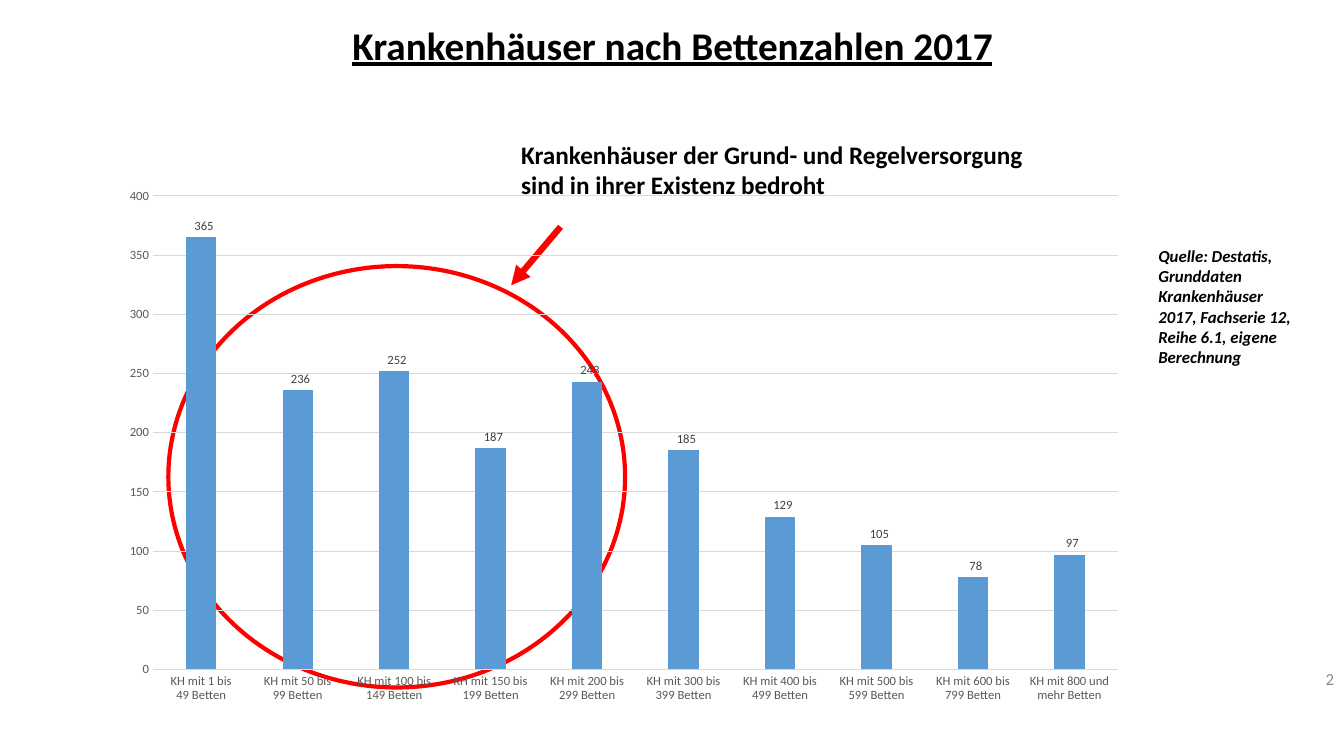
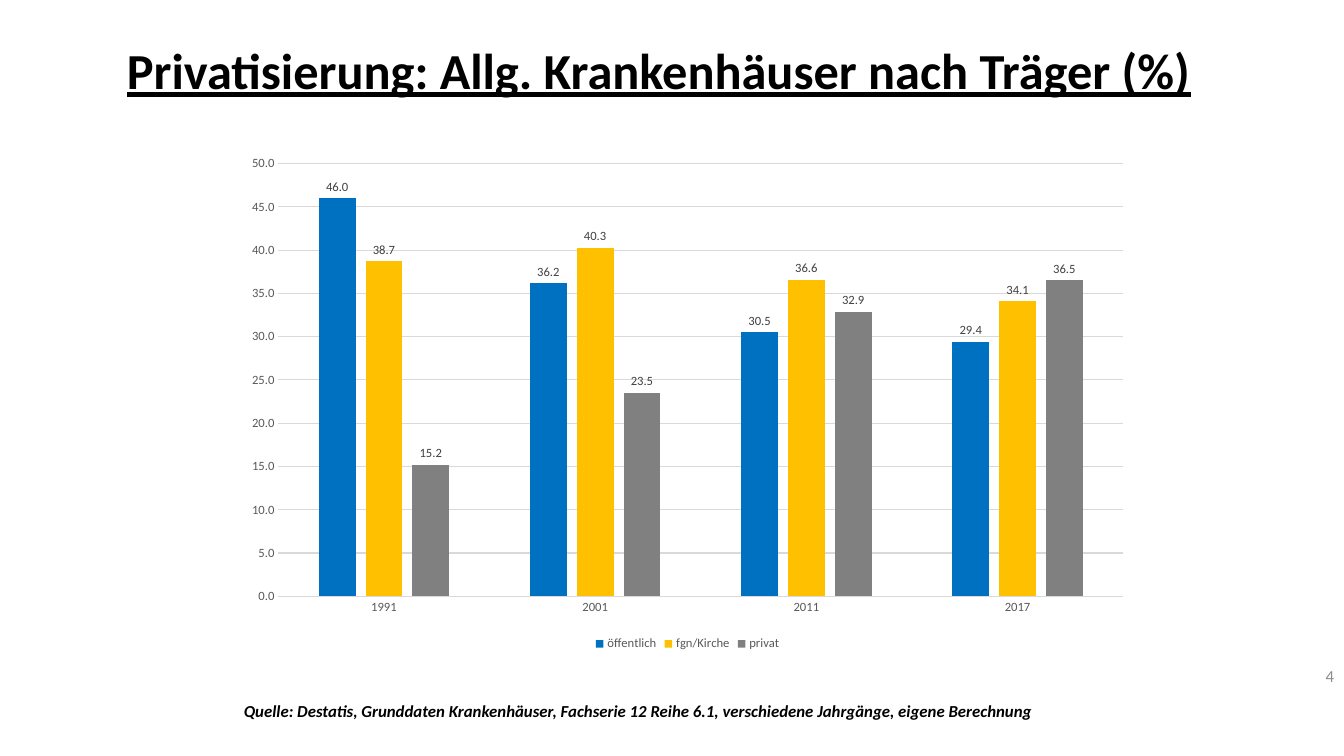
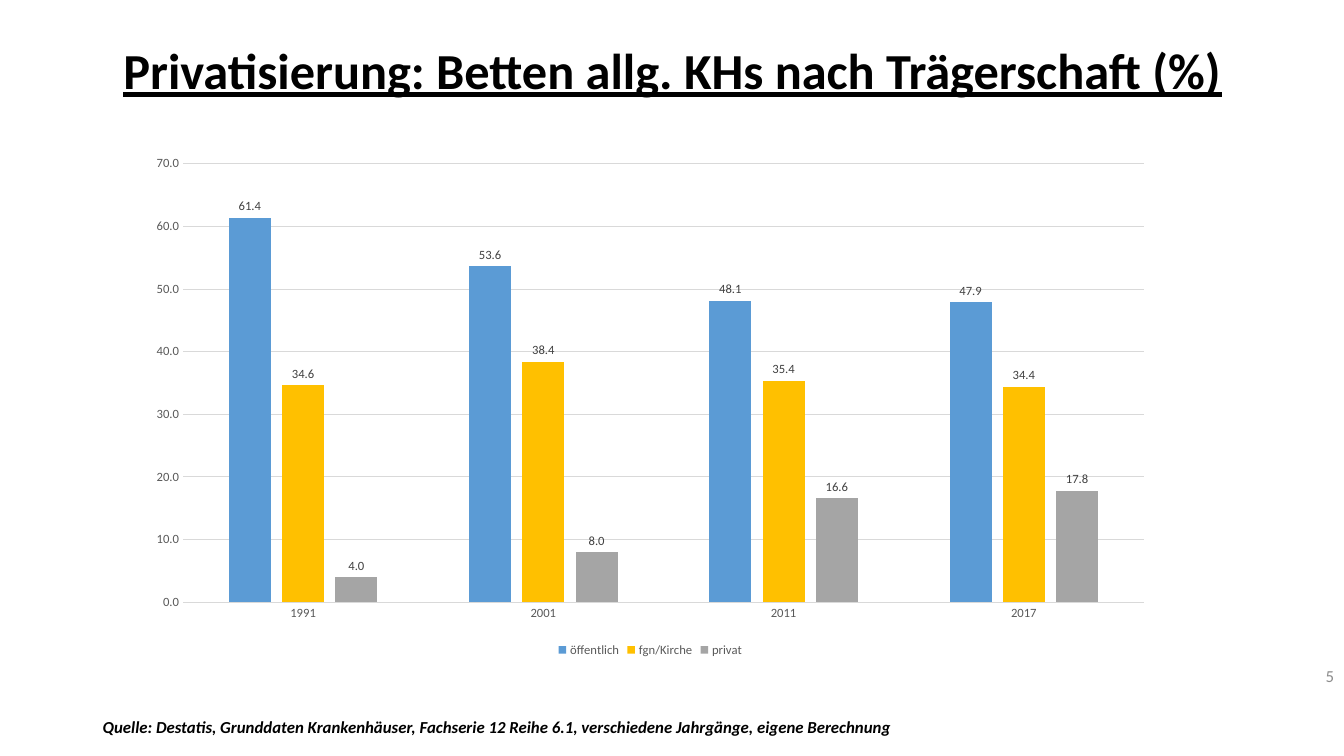
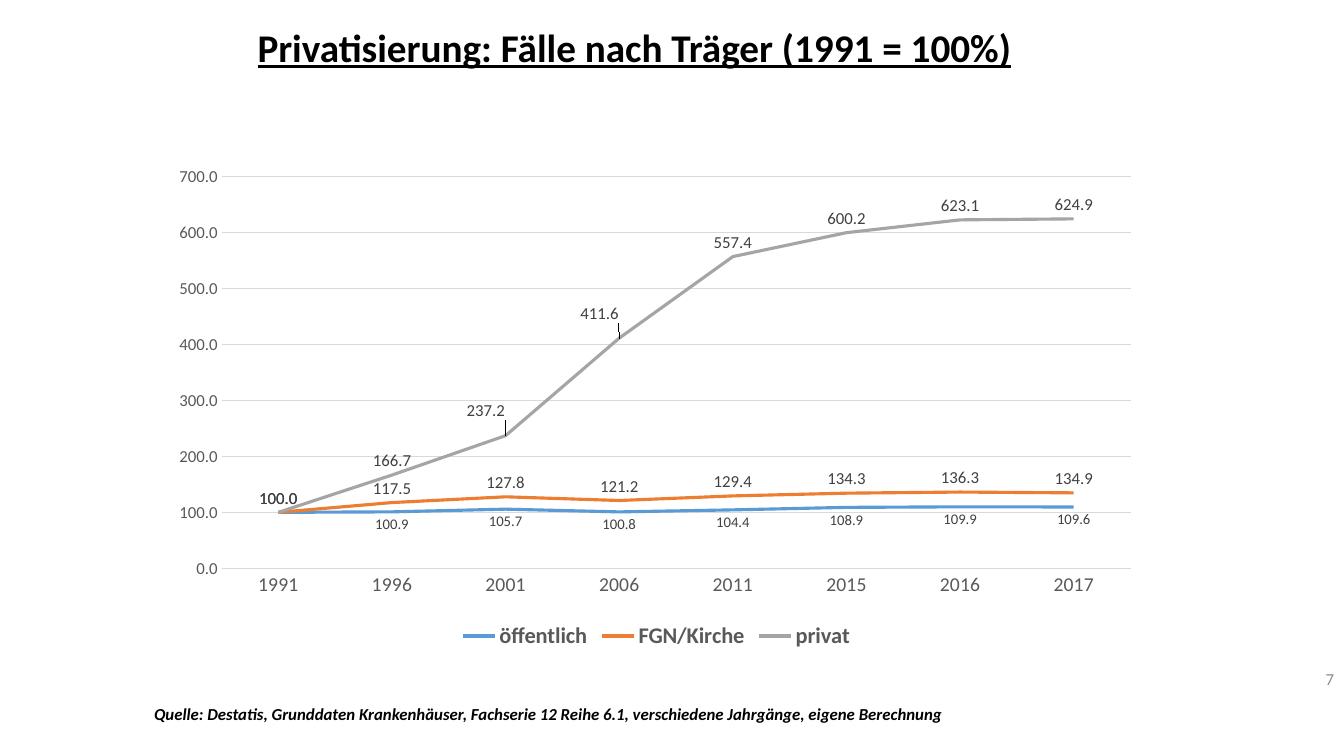
"""Build four slides on German hospitals by size and ownership."""
import pptx
import pptx.chart.data
import pptx.dml.color
import pptx.enum.chart
import pptx.enum.shapes
import pptx.enum.text
import pptx.oxml
import pptx.oxml.ns
import pptx.util

Inches = pptx.util.Inches
Pt = pptx.util.Pt
RGBColor = pptx.dml.color.RGBColor
ChartType = pptx.enum.chart.XL_CHART_TYPE
LabelPosition = pptx.enum.chart.XL_LABEL_POSITION
TickMark = pptx.enum.chart.XL_TICK_MARK
Anchor = pptx.enum.text.MSO_ANCHOR
Align = pptx.enum.text.PP_ALIGN

FONT = "Calibri"
BLACK = RGBColor(0x00, 0x00, 0x00)
RED = RGBColor(0xFF, 0x00, 0x00)
NUMBER_GRAY = RGBColor(0x8C, 0x8C, 0x8C)
AXIS_GRAY = RGBColor(0x59, 0x59, 0x59)
LABEL_GRAY = RGBColor(0x40, 0x40, 0x40)
GRID_GRAY = RGBColor(0xD9, 0xD9, 0xD9)
LIGHT_BLUE = RGBColor(0x5B, 0x9B, 0xD5)
DEEP_BLUE = RGBColor(0x00, 0x70, 0xC0)
YELLOW = RGBColor(0xFF, 0xC0, 0x00)
ORANGE = RGBColor(0xED, 0x7D, 0x31)
LIGHT_GRAY = RGBColor(0xA5, 0xA5, 0xA5)
DARK_GRAY = RGBColor(0x80, 0x80, 0x80)

COUNT_FORMAT = r"###\ ###\ ##0"
DECIMAL_FORMAT = "0.0"
SOURCE = ("Quelle: Destatis, Grunddaten Krankenhäuser, Fachserie 12 Reihe 6.1, "
          "verschiedene Jahrgänge, eigene Berechnung")
OWNER_YEARS = ["1991", "2001", "2011", "2017"]


def set_font(font, size, color, bold=False, italic=False, underline=False):
    """Apply the deck font with the given size, colour and style."""
    font.name = FONT
    font.size = Pt(size)
    font.color.rgb = color
    font.bold = bold
    font.italic = italic
    font.underline = underline


def place(shape, area):
    """Move and size a shape to left, top, width and height in inches."""
    shape.left, shape.top, shape.width, shape.height = map(Inches, area)


def add_page(deck, title, area, size, number, number_top, anchor=Anchor.MIDDLE):
    """Add a title-only slide with its formatted title and page number."""
    page = deck.slides.add_slide(deck.slide_layouts[5])
    place(page.shapes.title, area)
    frame = page.shapes.title.text_frame
    frame.text = title
    frame.auto_size = pptx.enum.text.MSO_AUTO_SIZE.NONE
    frame.vertical_anchor = anchor
    para = frame.paragraphs[0]
    para.alignment = Align.CENTER
    para.line_spacing = 0.9
    set_font(para.font, size, BLACK, bold=True, underline=True)
    box = add_text(page, number, (10.33, number_top, 3, 0.4), 12, NUMBER_GRAY, align=Align.RIGHT)
    box.text_frame.vertical_anchor = Anchor.MIDDLE
    return page


def add_text(page, text, area, size, color=BLACK, align=Align.LEFT, **style):
    """Add a wrapping text box, one paragraph for each line of text."""
    box = page.shapes.add_textbox(*map(Inches, area))
    box.text_frame.word_wrap = True
    box.text_frame.text = text
    for para in box.text_frame.paragraphs:
        para.alignment = align
        set_font(para.font, size, color, **style)
    return box


def add_source(page, area, text=SOURCE):
    """Add the bold italic source note."""
    add_text(page, text, area, 12, bold=True, italic=True)


def add_highlight(page):
    """Add the red ellipse and the arrow that points to it."""
    shapes = page.shapes.add_group_shape().shapes
    ellipse = shapes.add_shape(pptx.enum.shapes.MSO_SHAPE.OVAL,
                               *map(Inches, (1.67, 2.64, 4.53, 4.18)))
    ellipse.shadow.inherit = False
    ellipse.fill.background()
    arrow = shapes.add_connector(pptx.enum.shapes.MSO_CONNECTOR.STRAIGHT,
                                 *map(Inches, (5.56, 2.25, 5.07, 2.83)))
    for shape, width in ((ellipse, 3), (arrow, 4.5)):
        shape.line.color.rgb = RED
        shape.line.width = Pt(width)
    namespace = pptx.oxml.ns.nsdecls("a")
    arrow.line._get_or_add_ln().append(
        pptx.oxml.parse_xml(f'<a:tailEnd {namespace} type="triangle"/>'))
    arrow._element.spPr.append(pptx.oxml.parse_xml(f"<a:effectLst {namespace}/>"))


def manual_layout(**values):
    """Return a chart layout element with the given children in order."""
    children = "".join(f'<c:{name} val="{value}"/>' for name, value in values.items())
    return pptx.oxml.parse_xml(f'<c:layout {pptx.oxml.ns.nsdecls("c")}>'
                               f"<c:manualLayout>{children}</c:manualLayout></c:layout>")


def set_plot_area(chart, x, y, w, h):
    """Fix the inner plot area as fractions of the chart."""
    plot_area = chart._chartSpace.chart.plotArea
    for layout in plot_area.findall(pptx.oxml.ns.qn("c:layout")):
        plot_area.remove(layout)
    plot_area.insert(0, manual_layout(layoutTarget="inner", xMode="edge", yMode="edge",
                                      x=x, y=y, w=w, h=h))


def add_chart(page, kind, area, categories, series, number_format,
              category_size=9, value_size=9):
    """Add a chart with the shared axis style from names and values."""
    data = pptx.chart.data.CategoryChartData(number_format=number_format)
    data.categories = categories
    for name, values in series:
        data.add_series(name, values)
    chart = page.shapes.add_chart(kind, *map(Inches, area), data).chart
    chart.has_title = False
    chart.has_legend = False
    set_font(chart.font, 10, BLACK)
    for axis, size in ((chart.category_axis, category_size), (chart.value_axis, value_size)):
        axis.major_tick_mark = axis.minor_tick_mark = TickMark.NONE
        set_font(axis.tick_labels.font, size, AXIS_GRAY)
    grid = chart.value_axis.major_gridlines
    for line in (chart.category_axis.format.line, grid.format.line):
        line.color.rgb = GRID_GRAY
        line.width = Pt(0.75)
    chart.value_axis.format.line.fill.background()
    chart.value_axis.tick_labels.number_format = number_format
    chart.value_axis.tick_labels.number_format_is_linked = False
    chart.plots[0].vary_by_categories = False
    return chart


def add_legend(chart, size, bold=False):
    """Show the legend below the plot."""
    chart.has_legend = True
    chart.legend.position = pptx.enum.chart.XL_LEGEND_POSITION.BOTTOM
    chart.legend.include_in_layout = False
    set_font(chart.legend.font, size, AXIS_GRAY, bold=bold)


def label_series(series, size, position, number_format):
    """Show the values of a series."""
    labels = series.data_labels
    labels.show_value = True
    labels.position = position
    labels.number_format = number_format
    labels.number_format_is_linked = False
    set_font(labels.font, size, LABEL_GRAY)


def add_columns(page, area, categories, series, colors, number_format):
    """Add a clustered column chart with value labels."""
    chart = add_chart(page, ChartType.COLUMN_CLUSTERED, area, categories, series, number_format)
    chart.plots[0].gap_width = 219
    chart.plots[0].overlap = -27
    for columns, color in zip(chart.plots[0].series, colors):
        columns.format.fill.solid()
        columns.format.fill.fore_color.rgb = color
        label_series(columns, 9, LabelPosition.OUTSIDE_END, number_format)
    return chart


def shift_label(series, index, x, y):
    """Move one value label by fractions of the chart."""
    label = series.points[index].data_label
    set_font(label.font, 12, LABEL_GRAY)
    label.position = LabelPosition.ABOVE
    marker = series._element.xpath(f"c:dLbls/c:dLbl/c:idx[@val='{index}']")[0]
    marker.addnext(manual_layout(x=x, y=y))


def hide_first_label(series):
    """Delete the label of the first point."""
    series.data_labels._element.insert(0, pptx.oxml.parse_xml(
        f'<c:dLbl {pptx.oxml.ns.nsdecls("c")}><c:idx val="0"/><c:delete val="1"/></c:dLbl>'))


def build_bed_sizes(deck):
    """Build the slide of hospitals by number of beds."""
    page = add_page(deck, "Krankenhäuser nach Bettenzahlen 2017", (0.69, 0.21, 11.96, 0.92),
                    28, "2", 6.53, Anchor.TOP)
    add_source(page, (11.39, 2.39, 1.61, 1.31),
               "Quelle: Destatis, Grunddaten Krankenhäuser 2017, Fachserie 12, "
               "Reihe 6.1, eigene Berechnung")
    add_highlight(page)
    limits = [1, 50, 100, 150, 200, 300, 400, 500, 600, 800]
    categories = [f"KH mit {low} bis\n{following - 1} Betten"
                  for low, following in zip(limits, limits[1:])]
    categories.append("KH mit 800 und\nmehr Betten")
    counts = [365, 236, 252, 187, 243, 185, 129, 105, 78, 97]
    chart = add_columns(page, (1.11, 1.73, 10.18, 5.34), categories,
                        [("Series 1", counts)], [LIGHT_BLUE], COUNT_FORMAT)
    set_plot_area(chart, 0.04, 0.04, 0.94, 0.88)
    add_text(page, "Krankenhäuser der Grund- und Regelversorgung\nsind in ihrer Existenz bedroht",
             (5.07, 1.33, 6.67, 0.71), 18, bold=True)


def build_owners(deck, title, title_area, number, chart_area, source_area, values, colors):
    """Build a slide of shares by type of owner."""
    page = add_page(deck, title, title_area, 36, number, 6.5)
    series = list(zip(("öffentlich", "fgn/Kirche", "privat"), values))
    chart = add_columns(page, chart_area, OWNER_YEARS, series, colors, DECIMAL_FORMAT)
    add_legend(chart, 9)
    add_source(page, source_area)


def build_cases(deck):
    """Build the slide of the case trend by type of owner."""
    page = add_page(deck, "Privatisierung: Fälle nach Träger (1991 = 100%)",
                    (-0.07, 0.12, 12.72, 0.75), 28, "7", 6.53)
    years = ["1991", "1996", "2001", "2006", "2011", "2015", "2016", "2017"]
    cases = [
        ("öffentlich", [100, 100.9, 105.7, 100.8, 104.4, 108.9, 109.9, 109.6]),
        ("FGN/Kirche", [100, 117.5, 127.8, 121.2, 129.4, 134.3, 136.3, 134.9]),
        ("privat", [100, 166.7, 237.2, 411.6, 557.4, 600.2, 623.1, 624.9]),
    ]
    chart = add_chart(page, ChartType.LINE, (1.61, 1.17, 9.8, 5.32), years, cases,
                      DECIMAL_FORMAT, category_size=14, value_size=12)
    set_plot_area(chart, 0.06, 0.11, 0.92, 0.73)
    add_legend(chart, 16, bold=True)
    styles = [(LIGHT_BLUE, 10.5, LabelPosition.BELOW),
              (ORANGE, 12, LabelPosition.ABOVE),
              (LIGHT_GRAY, 12, LabelPosition.ABOVE)]
    public, church, private = chart.plots[0].series
    for line, (color, size, position) in zip((public, church, private), styles):
        line.smooth = False
        line.format.line.color.rgb = color
        line.format.line.width = Pt(2.25)
        label_series(line, size, position, DECIMAL_FORMAT)
    hide_first_label(public)
    for index in (2, 3):
        shift_label(private, index, -0.02, -0.02)
    add_source(page, (1.43, 6.93, 9.44, 0.3))


def main():
    """Build and save the deck."""
    deck = pptx.Presentation()
    deck.slide_width = Inches(13.33)
    deck.slide_height = Inches(7.5)
    build_bed_sizes(deck)
    build_owners(deck, "Privatisierung: Allg. Krankenhäuser nach Träger (%)",
                 (0.65, 0, 11.77, 1.45), "4", (2.32, 1.45, 9, 5.05), (2.32, 6.9, 8.28, 0.3),
                 [(46.0, 36.2, 30.5, 29.4), (38.7, 40.3, 36.6, 34.1), (15.2, 23.5, 32.9, 36.5)],
                 (DEEP_BLUE, YELLOW, DARK_GRAY))
    build_owners(deck, "Privatisierung: Betten allg. KHs nach Trägerschaft (%)",
                 (0.92, 0, 11.5, 1.45), "5", (1.35, 1.45, 10.2, 5.11), (0.92, 7.06, 8.72, 0.3),
                 [(61.4, 53.6, 48.1, 47.9), (34.6, 38.4, 35.4, 34.4), (4.0, 8.0, 16.6, 17.8)],
                 (LIGHT_BLUE, YELLOW, LIGHT_GRAY))
    build_cases(deck)
    deck.save("out.pptx")


if __name__ == "__main__":
    main()
